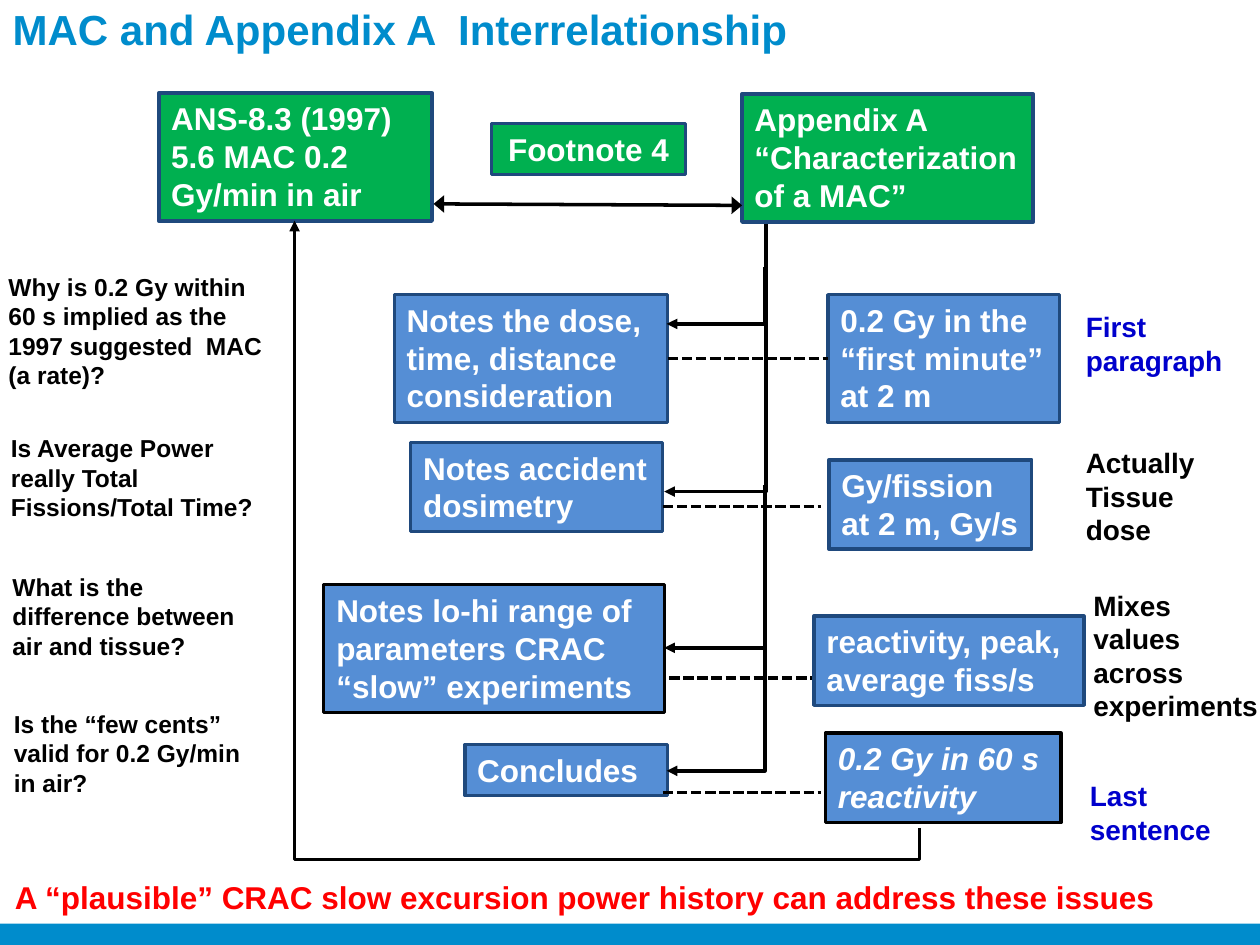
"""Build the slide relating the MAC clause to its Appendix A."""
from lxml.etree import SubElement
from pptx import Presentation
from pptx.dml.color import RGBColor
from pptx.enum.dml import MSO_LINE
from pptx.enum.shapes import MSO_CONNECTOR as CONNECTOR, MSO_SHAPE as SHAPE
from pptx.enum.text import MSO_ANCHOR as ANCHOR, MSO_AUTO_SIZE as AUTO_SIZE, PP_ALIGN as ALIGN
from pptx.oxml.ns import qn
from pptx.util import Cm, Pt

SKY = RGBColor(0x00, 0x8C, 0xCC)
GREEN = RGBColor(0x00, 0xB0, 0x50)
BLUE = RGBColor(0x55, 0x8E, 0xD5)
NAVY = RGBColor(0x1F, 0x49, 0x7D)
INK = RGBColor(0x00, 0x00, 0xCC)
RED = RGBColor(0xFF, 0x00, 0x00)
BLACK = RGBColor(0, 0, 0)
WHITE = RGBColor(0xFF, 0xFF, 0xFF)

TITLE = "MAC and Appendix A  Interrelationship"

# name: (text, left, top, width, line count, fill, outline, outline points)
BOXES = {
    "standard": ("ANS-8.3 (1997) 5.6 MAC 0.2 Gy/min in air", 3.2, 1.88, 5.51, 3, GREEN, NAVY, 2.25),
    "dosimetry": ("Notes accident dosimetry", 8.28, 8.92, 5.08, 2, BLUE, NAVY, 1.75),
    "range": ("Notes lo-hi range of parameters CRAC “slow” experiments",
              6.53, 11.79, 6.86, 3, BLUE, BLACK, 1.75),
    "fission": ("Gy/fission at 2 m, Gy/s", 16.71, 9.27, 4.09, 2, BLUE, NAVY, 2),
    "footnote": ("Footnote 4", 9.91, 2.49, 3.91, 1, GREEN, NAVY, 1.75),
    "conclusion": ("0.2 Gy in 60 s reactivity", 16.64, 14.78, 4.75, 2, BLUE, BLACK, 2),
    "appendix": ("Appendix A “Characterization of a MAC”", 14.96, 1.9, 5.87, 3, GREEN, NAVY, 2.25),
    "dose": ("Notes the dose, time, distance consideration", 7.95, 5.94, 5.51, 3, BLUE, NAVY, 1.75),
    "minute": ("0.2 Gy in the “first minute” at 2 m", 16.69, 5.94, 4.67, 3, BLUE, NAVY, 2),
    "reactivity": ("reactivity, peak, average fiss/s", 16.41, 12.42, 5.44, 2, BLUE, NAVY, 2),
    "concludes": ("Concludes", 9.37, 15.01, 4.09, 1, BLUE, NAVY, 2),
}

# (text, left, top, width, height, points, colour)
LABELS = [
    ("First paragraph", 21.64, 6.12, 4.09, 1.63, 16, INK),
    ("Last sentence", 21.72, 15.57, 4.09, 1.63, 16, INK),
    ("Actually Tissue dose", 21.64, 8.86, 3.33, 2.31, 16, BLACK),
    ("Mixes values across experiments", 21.79, 11.73, 3.94, 3, 16, BLACK),
    ("Why is 0.2 Gy within 60 s implied as the 1997 suggested  MAC (a rate)?",
     -0.08, 5.36, 5.69, 2.64, 14, BLACK),
    ("Is Average Power really Total Fissions/Total Time?", -0.03, 8.61, 5.77, 2.06, 14, BLACK),
    ("What is the difference between air and tissue?", 0, 11.4, 5.28, 2.06, 14, BLACK),
    ("Is the “few cents” valid for 0.2 Gy/min in air?", 0.03, 14.17, 5.61, 2.06, 14, BLACK),
    ("A “plausible” CRAC slow excursion power history can address these issues",
     0.05, 17.58, 23.72, 1.02, 18, RED),
]

RANGE_DASH = ((13.49, 13.67), (16.71, 13.67))
DASHES = [((13.36, 10.21), (16.56, 10.21)), ((13.36, 15.98), (16.56, 15.98))]
FOOTNOTE_ARROW = ((8.74, 4.11), (14.96, 4.14))
BRANCHES = [
    ((15.42, 5.38), (13.44, 6.53)),
    ((15.44, 4.52), (13.39, 9.91)),
    ((15.42, 9.78), (13.39, 13.06)),
    ((15.42, 12.73), (13.44, 15.54)),
]
FEEDBACK = ((18.54, 16.69), (5.94, 4.45))
FEEDBACK_BEND = -5200


def write(shape, text, size, color, align=ALIGN.LEFT, italic=False):
    frame = shape.text_frame
    frame.word_wrap = True
    frame.text = text
    paragraph = frame.paragraphs[0]
    paragraph.alignment = align
    font = paragraph.font
    font.name, font.size, font.bold, font.italic = "Arial", Pt(size), True, italic
    font.color.rgb = color
    return frame


def add_rectangle(slide, left, top, width, height, fill):
    shape = slide.shapes.add_shape(SHAPE.RECTANGLE, Cm(left), Cm(top), Cm(width), Cm(height))
    shape.shadow.inherit = False
    shape.fill.solid()
    shape.fill.fore_color.rgb = fill
    shape.line.fill.background()
    return shape


def add_box(slide, name):
    text, left, top, width, lines, fill, outline, points = BOXES[name]
    shape = add_rectangle(slide, left, top, width, 0.25 + 0.775 * lines, fill)
    shape.line.color.rgb = outline
    shape.line.width = Pt(points)
    align = ALIGN.CENTER if name == "footnote" else ALIGN.LEFT
    frame = write(shape, text, 18, WHITE, align, name == "conclusion")
    frame.vertical_anchor = ANCHOR.TOP
    return shape


def add_line(slide, start, end, dashed=False, arrows=(), head_width="med", kind=CONNECTOR.STRAIGHT):
    line = slide.shapes.add_connector(kind, *map(Cm, start + end))
    line.line.color.rgb = BLACK
    line.line.width = Pt(2)
    if dashed:
        line.line.dash_style = MSO_LINE.SQUARE_DOT
    properties = line._element.spPr
    for arrow in arrows:
        SubElement(properties.find(qn("a:ln")), qn(arrow), type="triangle", w=head_width, len="med")
    SubElement(properties, qn("a:effectLst"))
    return line


def add_elbow(slide, start, end, preset, bend=None):
    line = add_line(slide, start, end, arrows=["a:tailEnd"], kind=CONNECTOR.ELBOW)
    (x1, y1), (x2, y2) = start, end
    width, height = abs(y2 - y1), abs(x2 - x1)
    line.left, line.top = Cm((x1 + x2 - width) / 2), Cm((y1 + y2 - height) / 2)
    line.width, line.height = Cm(width), Cm(height)
    properties = line._element.spPr
    transform = properties.find(qn("a:xfrm"))
    transform.set("rot", "5400000")
    transform.set("flipH", "1" if y2 < y1 else "0")
    transform.set("flipV", "0")
    geometry = properties.find(qn("a:prstGeom"))
    geometry.set("prst", preset)
    if bend is not None:
        SubElement(geometry.find(qn("a:avLst")), qn("a:gd"), name="adj1", fmla=f"val {bend}")


def main():
    presentation = Presentation()
    presentation.slide_width, presentation.slide_height = Cm(25.4), Cm(19.05)
    slide = presentation.slides.add_slide(presentation.slide_layouts[5])

    title = slide.shapes.title
    title.left, title.top, title.width, title.height = Cm(0), Cm(0), Cm(25.4), Cm(1.09)
    frame = write(title, TITLE, 24, SKY)
    frame.auto_size = AUTO_SIZE.NONE
    frame.vertical_anchor = ANCHOR.BOTTOM
    frame.margin_bottom = 0

    add_rectangle(slide, 0, 18.62, 25.4, 0.43, SKY)
    add_line(slide, *RANGE_DASH, dashed=True)
    boxes = {name: add_box(slide, name) for name in BOXES}

    add_line(slide, *FOOTNOTE_ARROW, arrows=["a:headEnd", "a:tailEnd"], head_width="lg")
    for start, end in BRANCHES:
        add_elbow(slide, start, end, "bentConnector2")
    add_elbow(slide, *FEEDBACK, "bentConnector3", FEEDBACK_BEND)
    for start, end in DASHES:
        add_line(slide, start, end, dashed=True)
    dose_link = add_line(slide, (13.46, 7.22), (16.69, 7.22), dashed=True)
    dose_link.begin_connect(boxes["dose"], 3)
    dose_link.end_connect(boxes["minute"], 1)

    for text, left, top, width, height, size, color in LABELS:
        label = slide.shapes.add_textbox(Cm(left), Cm(top), Cm(width), Cm(height))
        frame = write(label, text, size, color)
        frame.word_wrap = color != RED

    presentation.save("out.pptx")


if __name__ == "__main__":
    main()
